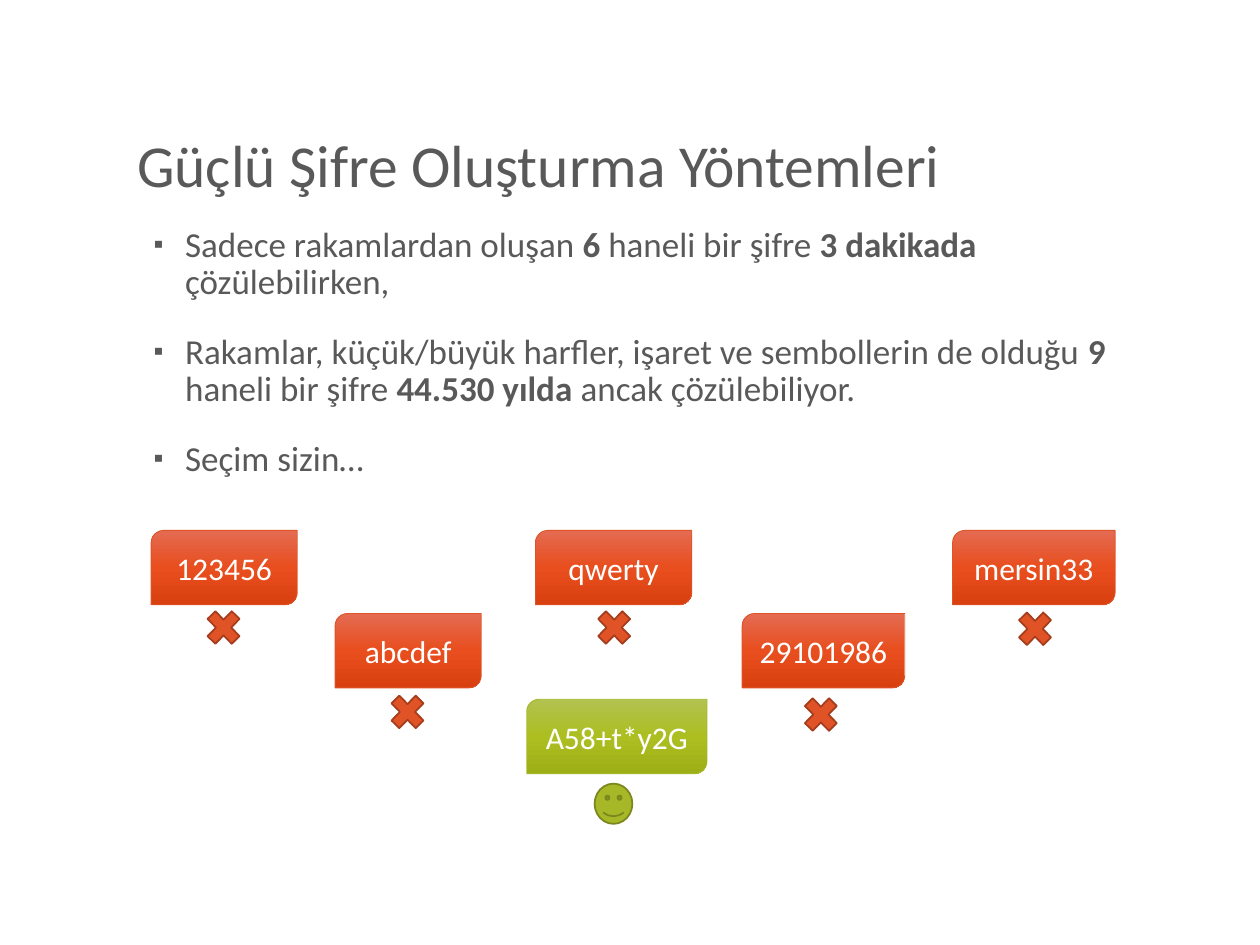
"""Build the slide on methods for creating strong passwords."""
from copy import deepcopy

from lxml.etree import SubElement
from pptx import Presentation
from pptx.dml.color import RGBColor
from pptx.enum.shapes import MSO_SHAPE
from pptx.enum.text import MSO_ANCHOR, MSO_AUTO_SIZE, PP_ALIGN
from pptx.oxml.ns import qn
from pptx.util import Pt

GREY = RGBColor(0x59, 0x59, 0x59)
WHITE = RGBColor(0xFF, 0xFF, 0xFF)
RED = RGBColor(0xDF, 0x53, 0x27)
DARK_RED = RGBColor(0xA5, 0x3D, 0x1D)
RED_STOPS = [RGBColor(0xE4, 0x6B, 0x52), RGBColor(0xE8, 0x4E, 0x1E), RGBColor(0xD9, 0x40, 0x10)]
GREEN = RGBColor(0xA6, 0xB7, 0x27)
DARK_GREEN = RGBColor(0x7B, 0x87, 0x1D)
GREEN_STOPS = [RGBColor(0xB2, 0xC2, 0x51), RGBColor(0xAC, 0xBE, 0x20), RGBColor(0x9D, 0xAF, 0x16)]

WEAK = {"mark": MSO_SHAPE.MATH_MULTIPLY, "size": (26.6, 27.4), "stops": RED_STOPS,
        "color": RED, "outline": DARK_RED}
STRONG = {"mark": MSO_SHAPE.SMILEY_FACE, "size": (21.6, 23), "stops": GREEN_STOPS,
          "color": GREEN, "outline": DARK_GREEN}
BADGE_HEIGHT = 42.5
PASSWORDS = [
    ("123456", 86.4, 303.1, 83.5, 114.5, 344.9, WEAK),
    ("abcdef", 191.5, 350.6, 83.5, 219.6, 393.1, WEAK),
    ("qwerty", 306, 303.1, 89.3, 337.7, 344.9, WEAK),
    ("29101986", 424.1, 350.6, 92.9, 455.8, 394.6, WEAK),
    ("mersin33", 544.3, 303.1, 92.9, 578.2, 345.6, WEAK),
    ("A58+t*y2G", 301, 399.6, 103, 339.8, 447.8, STRONG),
]
BULLETS = [
    [("Sadece rakamlardan oluşan ", False), ("6 ", True), ("haneli bir şifre ", False),
     ("3 dakikada ", True), ("çözülebilirken,", False)],
    [("Rakamlar, küçük/büyük harfler, işaret ve sembollerin de olduğu ", False), ("9", True),
     (" haneli bir şifre ", False), ("44.530 yılda ", True), ("ancak çözülebiliyor.", False)],
    [("Seçim sizin…", False)],
]


def add_run(paragraph, text, size, color, bold=False):
    run = paragraph.add_run()
    run.text = text
    for name, value in {"name": "Calibri", "size": Pt(size), "bold": bold}.items():
        setattr(run.font, name, value)
    run.font.color.rgb = color


def add_outlined_shape(preset, left, top, width, height, color, line_width):
    shape = slide.shapes.add_shape(preset, Pt(left), Pt(top), Pt(width), Pt(height))
    shape.shadow.inherit = False
    shape.line.color.rgb = color
    shape.line.width = Pt(line_width)
    return shape


presentation = Presentation()
presentation.slide_width, presentation.slide_height = Pt(720), Pt(540)
slide = presentation.slides.add_slide(presentation.slide_layouts[1])
title, body = slide.shapes.title, slide.placeholders[1]

for placeholder, box, anchor in [
    (title, (71.3, 23.8, 612.7, 94.3), MSO_ANCHOR.BOTTOM),
    (body, (77, 126, 607, 324), MSO_ANCHOR.TOP),
]:
    for name, value in zip(("left", "top", "width", "height"), box):
        setattr(placeholder, name, Pt(value))
    frame_format = {"vertical_anchor": anchor, "word_wrap": True, "auto_size": MSO_AUTO_SIZE.NONE}
    for name, value in frame_format.items():
        setattr(placeholder.text_frame, name, value)

heading = title.text_frame.paragraphs[0]
heading.alignment = PP_ALIGN.LEFT
heading.line_spacing = 0.9
add_run(heading, "Güçlü Şifre Oluşturma Yöntemleri", 34, GREY)

for index, runs in enumerate(BULLETS):
    paragraph = body.text_frame.add_paragraph() if index else body.text_frame.paragraphs[0]
    properties = paragraph._p.get_or_add_pPr()
    properties.set("marL", str(Pt(21.6)))
    properties.set("indent", str(Pt(-18)))
    SubElement(properties, qn("a:buSzPct"), val="80000")
    SubElement(properties, qn("a:buChar"), char="▪")
    paragraph.line_spacing = 0.9
    paragraph.space_before = Pt(18 if index else 0)
    for text, bold in runs:
        add_run(paragraph, text, 20, GREY, bold)

for password, left, top, width, mark_left, mark_top, style in PASSWORDS:
    badge = add_outlined_shape(MSO_SHAPE.ROUND_2_DIAG_RECTANGLE, left, top, width, BADGE_HEIGHT,
                               style["color"], 0.5)
    badge.fill.gradient()
    badge.fill.gradient_angle = 270
    stop_list = badge._element.spPr.find(qn("a:gradFill")).find(qn("a:gsLst"))
    stop_list.insert(1, deepcopy(stop_list[0]))
    for stop, position, color in zip(badge.fill.gradient_stops, (0, 0.5, 1), style["stops"]):
        stop.position = position
        stop.color.rgb = color
    badge.text_frame.word_wrap = False
    badge.text_frame.vertical_anchor = MSO_ANCHOR.MIDDLE
    label = badge.text_frame.paragraphs[0]
    label.alignment = PP_ALIGN.CENTER
    add_run(label, password, 18, WHITE)

    mark = add_outlined_shape(style["mark"], mark_left, mark_top, *style["size"],
                              style["outline"], 1)
    mark.fill.solid()
    mark.fill.fore_color.rgb = style["color"]

presentation.save("out.pptx")
